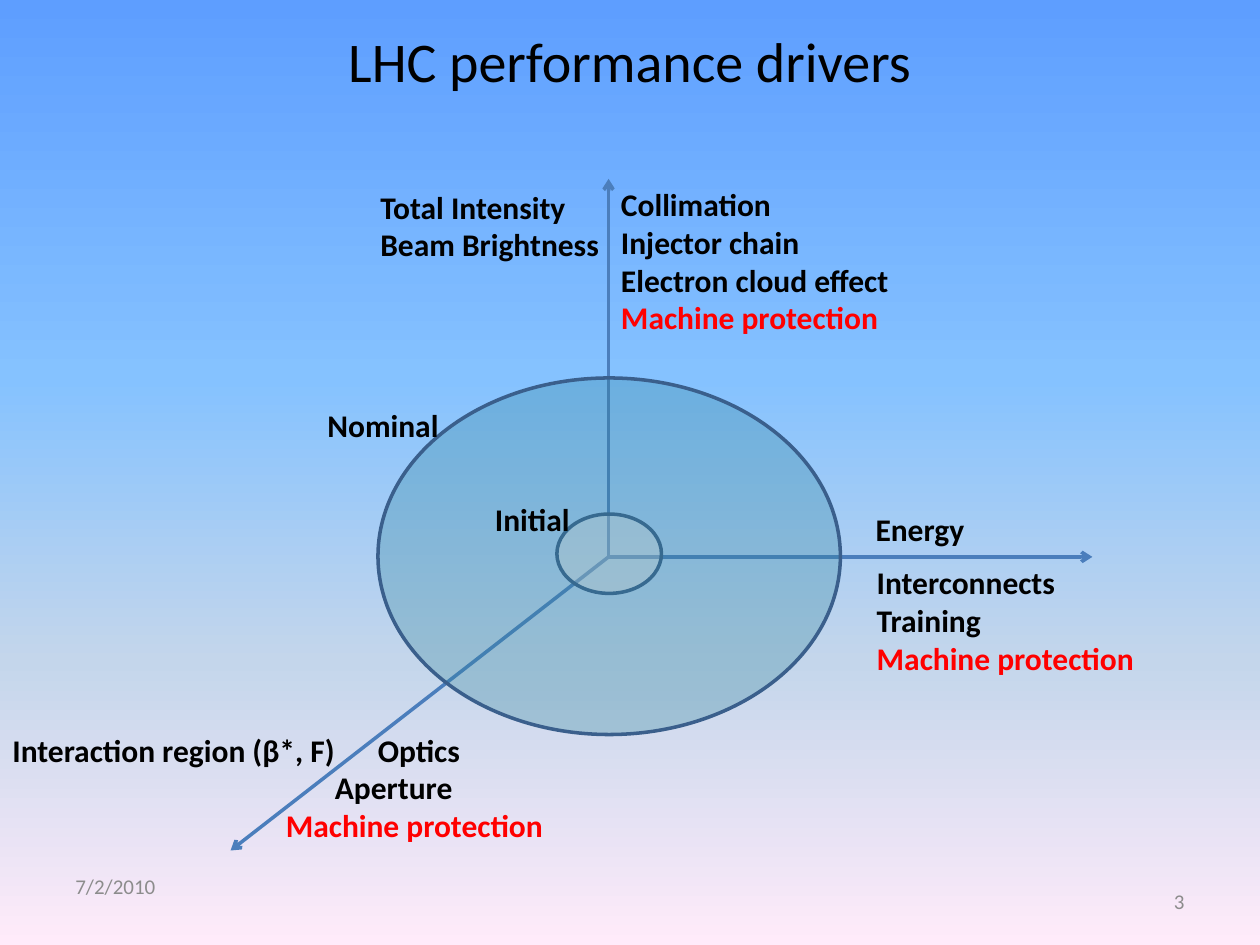
from pptx import Presentation
from pptx.dml.color import RGBColor
from pptx.enum.shapes import MSO_CONNECTOR, MSO_SHAPE
from pptx.enum.text import MSO_ANCHOR, PP_ALIGN
from pptx.oxml.ns import qn
from pptx.util import Inches, Pt
from lxml.etree import SubElement

BLACK = RGBColor(0x00, 0x00, 0x00)
RED = RGBColor(0xFF, 0x00, 0x00)
GRAY = RGBColor(0x8C, 0x8C, 0x8C)
AXIS = RGBColor(0x4B, 0x7E, 0xBC)
OUTLINE = RGBColor(0x3A, 0x5F, 0x8C)
CREAM = RGBColor(0xFD, 0xEA, 0xDA)
TEAL = RGBColor(0x31, 0x85, 0x9C)
SKY = [(0, RGBColor(0x5E, 0x9E, 0xFF)), (40, RGBColor(0x85, 0xC2, 0xFF)),
       (70, RGBColor(0xC4, 0xD6, 0xEB)), (100, RGBColor(0xFF, 0xEB, 0xFA))]


def write(sp, lines, size=18, bold=True, color=BLACK, align=PP_ALIGN.LEFT,
          anchor=MSO_ANCHOR.TOP, wrap=False, indents=(), last_color=None):
    """Fill sp with one paragraph per line; indents are left margins in inches."""
    tf = sp.text_frame
    tf.word_wrap = wrap
    tf.vertical_anchor = anchor
    for i, line in enumerate(lines):
        p = tf.paragraphs[0] if i == 0 else tf.add_paragraph()
        p.alignment = align
        if i < len(indents):
            p._p.get_or_add_pPr().set("marL", str(Inches(indents[i])))
        r = p.add_run()
        r.text = line
        r.font.name = "Calibri"
        r.font.size = Pt(size)
        r.font.bold = bold
        is_last = i == len(lines) - 1
        r.font.color.rgb = last_color if last_color and is_last else color


prs = Presentation()
prs.slide_width, prs.slide_height = Inches(10), Inches(7.5)
s = prs.slides.add_slide(prs.slide_layouts[5])

# Background gradient, top to bottom
fill = s.background.fill
fill.gradient()
fill.gradient_angle = 270
stops = s.background._cSld.find(".//" + qn("a:gsLst"))
for stop in list(stops):
    stops.remove(stop)
for pos, color in SKY:
    stop = SubElement(stops, qn("a:gs"), pos=str(pos * 1000))
    SubElement(stop, qn("a:srgbClr"), val=str(color))

# Title, date and page number
title = s.shapes.title
title.left, title.top = Inches(0.5), Inches(0.17)
title.width, title.height = Inches(9), Inches(0.62)
write(title, ["LHC performance drivers"], size=32, bold=False, wrap=True,
      align=PP_ALIGN.CENTER, anchor=MSO_ANCHOR.MIDDLE)
for x, y, text, align in [(0.5, 6.83, "7/2/2010", PP_ALIGN.LEFT),
                          (7.17, 6.95, "3", PP_ALIGN.RIGHT)]:
    footer = s.shapes.add_textbox(Inches(x), Inches(y), Inches(2.33), Inches(0.4))
    write(footer, [text], size=12, bold=False, color=GRAY, align=align,
          anchor=MSO_ANCHOR.MIDDLE, wrap=True)

# Three axes from a common origin
ORIGIN = Inches(4.83), Inches(4.42)
for x, y in [(8.67, 4.42), (4.83, 1.42), (1.83, 6.75)]:
    axis = s.shapes.add_connector(MSO_CONNECTOR.STRAIGHT, *ORIGIN, Inches(x), Inches(y))
    axis.line.color.rgb = AXIS
    axis.line.width = Pt(2)
    SubElement(axis.line._get_or_add_ln(), qn("a:tailEnd"), type="arrow")
    SubElement(axis._element.spPr, qn("a:effectLst"))

# Initial and nominal performance regions
for x, y, w, h, color in [(4.42, 4.08, 0.83, 0.63, CREAM),
                          (3, 3, 3.67, 2.83, TEAL)]:
    region = s.shapes.add_shape(MSO_SHAPE.OVAL, Inches(x), Inches(y), Inches(w), Inches(h))
    region.shadow.inherit = False
    region.fill.solid()
    region.fill.fore_color.rgb = color
    SubElement(region._element.spPr.find(".//" + qn("a:srgbClr")), qn("a:alpha"), val="30000")
    region.line.color.rgb = OUTLINE
    region.line.width = Pt(2)

# Axis names, region names and the drivers of each axis
PROTECTION = "Machine protection"
labels = [
    (2.92, 1.44, 1.95, ["Total Intensity", "Beam Brightness"], ()),
    (6.85, 4, 0.91, ["Energy"], ()),
    (0, 5.75, 2.78, ["Interaction region (β*, F)"], ()),
    (6.86, 4.42, 2.26, ["Interconnects", "Training", PROTECTION], ()),
    (4.83, 1.42, 2.35,
     ["Collimation", "Injector chain", "Electron cloud effect", PROTECTION], ()),
    (2.17, 5.75, 2.26, ["Optics", "Aperture", PROTECTION], (0.73, 0.39)),
    (2.5, 3.17, 1.09, ["Nominal"], ()),
    (3.83, 3.92, 0.8, ["Initial"], ()),
]
for x, y, w, lines, indents in labels:
    height = 0.1 + 0.3 * len(lines)
    label = s.shapes.add_textbox(Inches(x), Inches(y), Inches(w), Inches(height))
    write(label, lines, indents=indents,
          last_color=RED if lines[-1] == PROTECTION else None)

prs.save("out.pptx")
